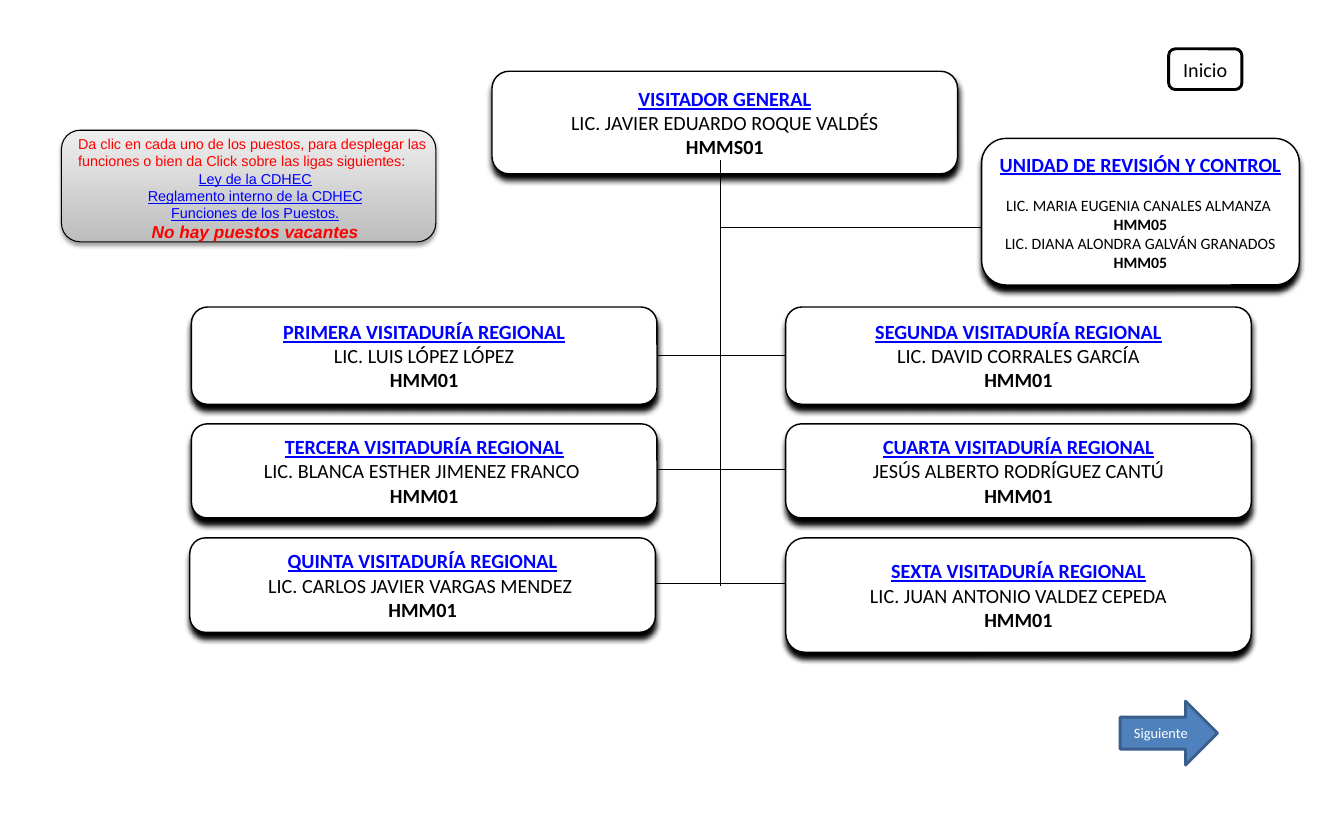
from dataclasses import dataclass

from lxml import etree
from pptx import Presentation
from pptx.dml import color
from pptx.enum import shapes, text
from pptx.oxml import ns
from pptx.util import Cm, Pt

COLORS = {
    "black": "000000",
    "white": "FFFFFF",
    "link": "0000FF",
    "red": "FF0000",
    "gray_dark": "BDBDBD",
    "gray_light": "EEEEEE",
    "arrow": "4F81BD",
    "arrow_line": "3A5F8C",
}
CM_PER_INCH = 2.54


@dataclass
class Line:
    words: str
    size: float = 14
    ink: str = "black"
    bold: bool = False
    italic: bool = False
    underline: bool = False
    font: str = "Calibri"
    before: float = 0
    align: text.PP_ALIGN = text.PP_ALIGN.CENTER


@dataclass
class Shadow:
    blur: float
    dist: float
    alpha: int


@dataclass
class Box:
    left: float
    top: float
    width: float
    height: float
    lines: list[Line]
    fill: str = "white"
    line: str = "black"
    weight: float = 1
    kind: shapes.MSO_SHAPE = shapes.MSO_SHAPE.ROUNDED_RECTANGLE
    shadow: Shadow | None = None
    margins: tuple[float, float] = (0.25, 0.13)
    wrap: bool = True


@dataclass
class Link:
    x1: float
    y1: float
    x2: float
    y2: float


def rgb(name: str) -> color.RGBColor:
    return color.RGBColor.from_string(COLORS[name])


def set_all(obj, values: dict) -> None:
    for name, value in values.items():
        setattr(obj, name, value)


def write(tf, lines: list[Line]) -> None:
    for i, ln in enumerate(lines):
        p = tf.paragraphs[0] if i == 0 else tf.add_paragraph()
        set_all(p, {"alignment": ln.align, "space_before": Pt(ln.before)})
        r = p.add_run()
        r.text = ln.words
        set_all(r.font, {"name": ln.font, "size": Pt(ln.size), "bold": ln.bold,
                         "italic": ln.italic, "underline": ln.underline})
        r.font.color.rgb = rgb(ln.ink)


def add_shadow(sp, shadow: Shadow) -> None:
    effects = sp._element.spPr.find(ns.qn("a:effectLst"))
    outer = etree.SubElement(effects, ns.qn("a:outerShdw"), blurRad=str(Pt(shadow.blur)),
                             dist=str(Pt(shadow.dist)), dir="5400000", rotWithShape="0")
    ink = etree.SubElement(outer, ns.qn("a:srgbClr"), val=COLORS["black"])
    etree.SubElement(ink, ns.qn("a:alpha"), val=str(shadow.alpha * 1000))


def add_box(slide, box: Box):
    sp = slide.shapes.add_shape(box.kind, Cm(box.left), Cm(box.top),
                                Cm(box.width), Cm(box.height))
    sp.fill.solid()
    sp.fill.fore_color.rgb = rgb(box.fill)
    sp.line.color.rgb = rgb(box.line)
    sp.line.width = Pt(box.weight)
    sp.shadow.inherit = False
    if box.shadow:
        add_shadow(sp, box.shadow)
    side, end = map(Cm, box.margins)
    set_all(sp.text_frame, {"margin_left": side, "margin_right": side, "margin_top": end,
                            "margin_bottom": end, "word_wrap": box.wrap,
                            "vertical_anchor": text.MSO_ANCHOR.MIDDLE})
    write(sp.text_frame, box.lines)
    return sp


def add_link(slide, link: Link) -> None:
    cx = slide.shapes.add_connector(shapes.MSO_CONNECTOR.STRAIGHT, Cm(link.x1), Cm(link.y1),
                                    Cm(link.x2), Cm(link.y2))
    cx.line.color.rgb = rgb("black")
    cx.line.width = Pt(0.75)
    etree.SubElement(cx._element.spPr, ns.qn("a:effectLst"))


def post(left: float, top: float, width: float, height: float, title: str,
         people: list[tuple[str, str]], size: float = 14, gap: float = 0) -> Box:
    lines = [Line(title, ink="link", bold=True, underline=True)]
    for i, (person, code) in enumerate(people):
        lines += [Line(person, size, before=0 if i else gap), Line(code, size, bold=True)]
    return Box(left, top, width, height, lines, shadow=Shadow(4, 4, 100),
               margins=(0.43, 0.23), wrap=False)


def add_note(slide) -> None:
    left, top, width, height = 1.51, 3.2, 9.19, 2.74
    sp = add_box(slide, Box(left, top, width, height, [], weight=0.75,
                            shadow=Shadow(3.1, 1.6, 38)))
    sp.fill.gradient()
    sp.fill.gradient_angle = 90
    for stop, name in zip(sp.fill.gradient_stops, ("gray_dark", "gray_light")):
        stop.color.rgb = rgb(name)
    tb = slide.shapes.add_textbox(Cm(left + 0.16), Cm(top), Cm(width), Cm(2.9))
    tb.text_frame.word_wrap = True
    intro = Line("Da clic en cada uno de los puestos, para desplegar las funciones "
                 "o bien da Click sobre las ligas siguientes:", 10, "red",
                 font="Arial", align=text.PP_ALIGN.LEFT)
    links = [Line(words, 10, "link", underline=True, font="Arial")
             for words in ("Ley de la CDHEC", "Reglamento interno de la CDHEC",
                           "Funciones de los Puestos.")]
    vacancies = Line("No hay puestos vacantes", 12, "red", bold=True, italic=True, font="Arial")
    write(tb.text_frame, [intro, *links, vacancies])


WIDE = 11.43
LEFT, RIGHT = 4.7, 19.29
TRUNK = 17.69
ROWS = (7.54, 10.41, 13.21)

ROOT = post(12.08, 1.75, WIDE, 2.52, "VISITADOR GENERAL",
            [("LIC. JAVIER EDUARDO ROQUE VALDÉS", "HMMS01")])
REGIONS = [
    post(left, ROWS[row], WIDE, height, f"{order} VISITADURÍA REGIONAL", [(person, "HMM01")])
    for left, row, height, order, person in (
        (RIGHT, 0, 2.39, "SEGUNDA", "LIC. DAVID CORRALES GARCÍA"),
        (LEFT, 0, 2.39, "PRIMERA", "LIC. LUIS LÓPEZ LÓPEZ"),
        (LEFT, 1, 2.31, "TERCERA", "LIC. BLANCA ESTHER JIMENEZ FRANCO "),
        (RIGHT, 1, 2.31, "CUARTA", "JESÚS ALBERTO RODRÍGUEZ CANTÚ"),
        (LEFT - 0.04, 2, 2.32, "QUINTA", "LIC. CARLOS JAVIER VARGAS MENDEZ "),
        (RIGHT, 2, 2.81, "SEXTA", "LIC. JUAN ANTONIO VALDEZ CEPEDA"),
    )
]
REVIEW = post(24.1, 3.4, 7.8, 3.6, "UNIDAD DE REVISIÓN Y CONTROL",
              [("LIC. MARIA EUGENIA CANALES ALMANZA ", "HMM05"),
               ("LIC. DIANA ALONDRA GALVÁN GRANADOS", "HMM05")], size=11, gap=13.4)
HOME = Box(28.69, 1.2, 1.8, 1, [Line("Inicio")], weight=2)
NEXT = Box(27.5, 17.22, 2.39, 1.57, [Line("Siguiente", 10, "white")], "arrow", "arrow_line", 2,
           shapes.MSO_SHAPE.RIGHT_ARROW)
LINKS = [Link(TRUNK, 3.94, TRUNK, 14.4), Link(TRUNK, 5.59, 24.5, 5.59),
         *(Link(14.88, y, 20.71, y) for y in (8.73, 11.53, 14.33))]


def main() -> None:
    prs = Presentation()
    prs.slide_width = Cm(12.99 * CM_PER_INCH)
    prs.slide_height = Cm(7.88 * CM_PER_INCH)
    slide = prs.slides.add_slide(prs.slide_layouts[6])
    add_box(slide, ROOT)
    for link in LINKS:
        add_link(slide, link)
    for box in (*REGIONS, REVIEW, HOME):
        add_box(slide, box)
    add_note(slide)
    add_box(slide, NEXT)
    prs.save("out.pptx")


if __name__ == "__main__":
    main()
